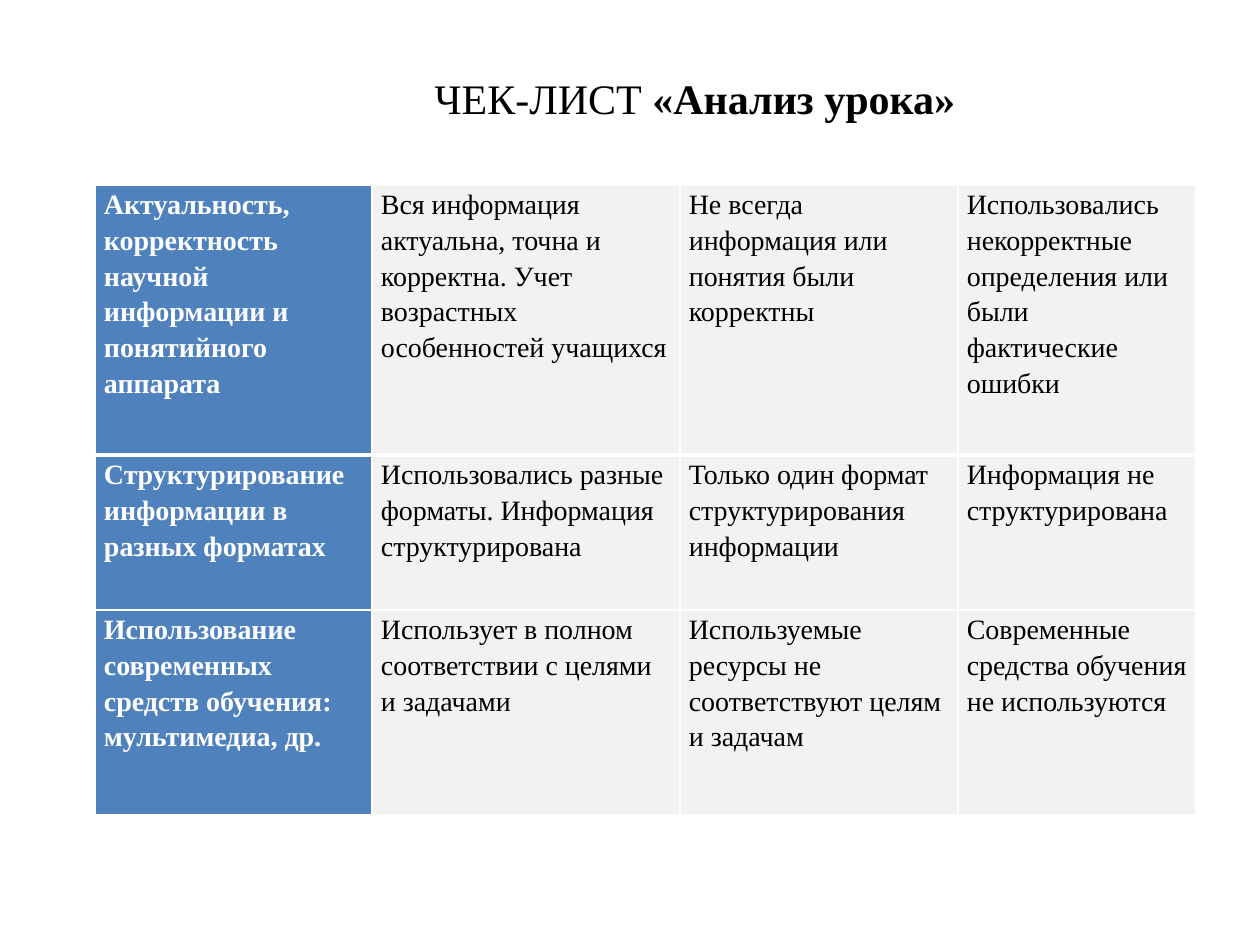
from dataclasses import dataclass

from lxml import etree
from pptx import Presentation
from pptx.dml.color import RGBColor
from pptx.enum.text import MSO_ANCHOR, MSO_AUTO_SIZE
from pptx.oxml.ns import qn
from pptx.util import Pt

TOP = MSO_ANCHOR.TOP
GROW = MSO_AUTO_SIZE.SHAPE_TO_FIT_TEXT
SCALE = 914400 // 126  # EMU in one px


@dataclass(frozen=True)
class Theme:
    face: str = "Times New Roman"
    head: int = 24
    body: int = 16
    ink: str = "000000"
    pale: str = "FFFFFF"
    blue: str = "4F81BD"
    gray: str = "F2F2F2"


def emu(px):
    return px * SCALE


def assign(item, form):
    for name, value in form.items():
        setattr(item, name, value)


class Deck:
    def __init__(self, theme, wide, high):
        self.theme = theme
        self.file = Presentation()
        assign(self.file, {"slide_width": emu(wide), "slide_height": emu(high)})
        self.slide = self.file.slides.add_slide(self.file.slide_layouts[6])

    def label(self, para, text, size, color, bold=False):
        run = para.add_run()
        run.text = text
        assign(run.font, {"name": self.theme.face, "size": Pt(size), "bold": bold})
        run.font.color.rgb = RGBColor.from_string(color)

    def title(self, box, parts):
        frame = self.slide.shapes.add_textbox(*map(emu, box)).text_frame
        assign(frame, {"word_wrap": False, "auto_size": GROW})
        for text, bold in parts:
            self.label(frame.paragraphs[0], text, self.theme.head, self.theme.ink, bold)

    def edge(self, cell, side, width):
        line = etree.SubElement(cell._tc.get_or_add_tcPr(), qn(f"a:ln{side}"), w=str(Pt(width)))
        fill = etree.SubElement(line, qn("a:solidFill"))
        etree.SubElement(fill, qn("a:srgbClr"), val=self.theme.pale)

    def cell(self, cell, text, lead, edges):
        look = self.theme
        assign(cell, {"margin_left": emu(9), "margin_right": emu(9),
                      "margin_top": 0, "margin_bottom": 0, "vertical_anchor": TOP})
        for side, width in edges.items():
            self.edge(cell, side, width)
        cell.fill.solid()
        cell.fill.fore_color.rgb = RGBColor.from_string(look.blue if lead else look.gray)
        para = cell.text_frame.paragraphs[0]
        para.line_spacing = 1.15
        self.label(para, text, look.body, look.pale if lead else look.ink, lead)

    def table(self, left, top, cols, rows, data):
        box = map(emu, (left, top, sum(cols), sum(rows)))
        grid = self.slide.shapes.add_table(len(rows), len(cols), *box).table
        assign(grid, {"first_row": False, "horz_banding": False})
        for col, width in zip(grid.columns, cols):
            col.width = emu(width)
        for r, (row, height) in enumerate(zip(grid.rows, rows)):
            row.height = emu(height)
            # A thick rule parts the first row from the rest
            edges = {"L": 1, "R": 1, "T": 3 if r == 1 else 1, "B": 3 if r == 0 else 1}
            for c, text in enumerate(data[r]):
                self.cell(grid.cell(r, c), text, c == 0, edges)


ROWS = [
    ("Актуальность, корректность научной информации и понятийного аппарата",
     "Вся информация актуальна, точна и корректна. Учет возрастных особенностей учащихся",
     "Не всегда информация или понятия были корректны",
     "Использовались некорректные определения или были фактические ошибки"),
    ("Структурирование информации в разных форматах",
     "Использовались разные форматы. Информация структурирована",
     "Только один формат структурирования информации",
     "Информация не структурирована"),
    ("Использование современных средств обучения: мультимедиа, др.",
     "Использует в полном соответствии с целями и задачами",
     "Используемые ресурсы не соответствуют целям и задачам",
     "Современные средства обучения не используются"),
]


def main():
    deck = Deck(Theme(), 1260, 945)
    # Heading
    deck.title((422, 66, 552, 63), [("ЧЕК-ЛИСТ", False), (" «Анализ урока»", True)])
    # Criteria and levels
    deck.table(95, 185, (277, 308, 278, 238), (270, 155, 205), ROWS)
    deck.file.save("out.pptx")


if __name__ == "__main__":
    main()
